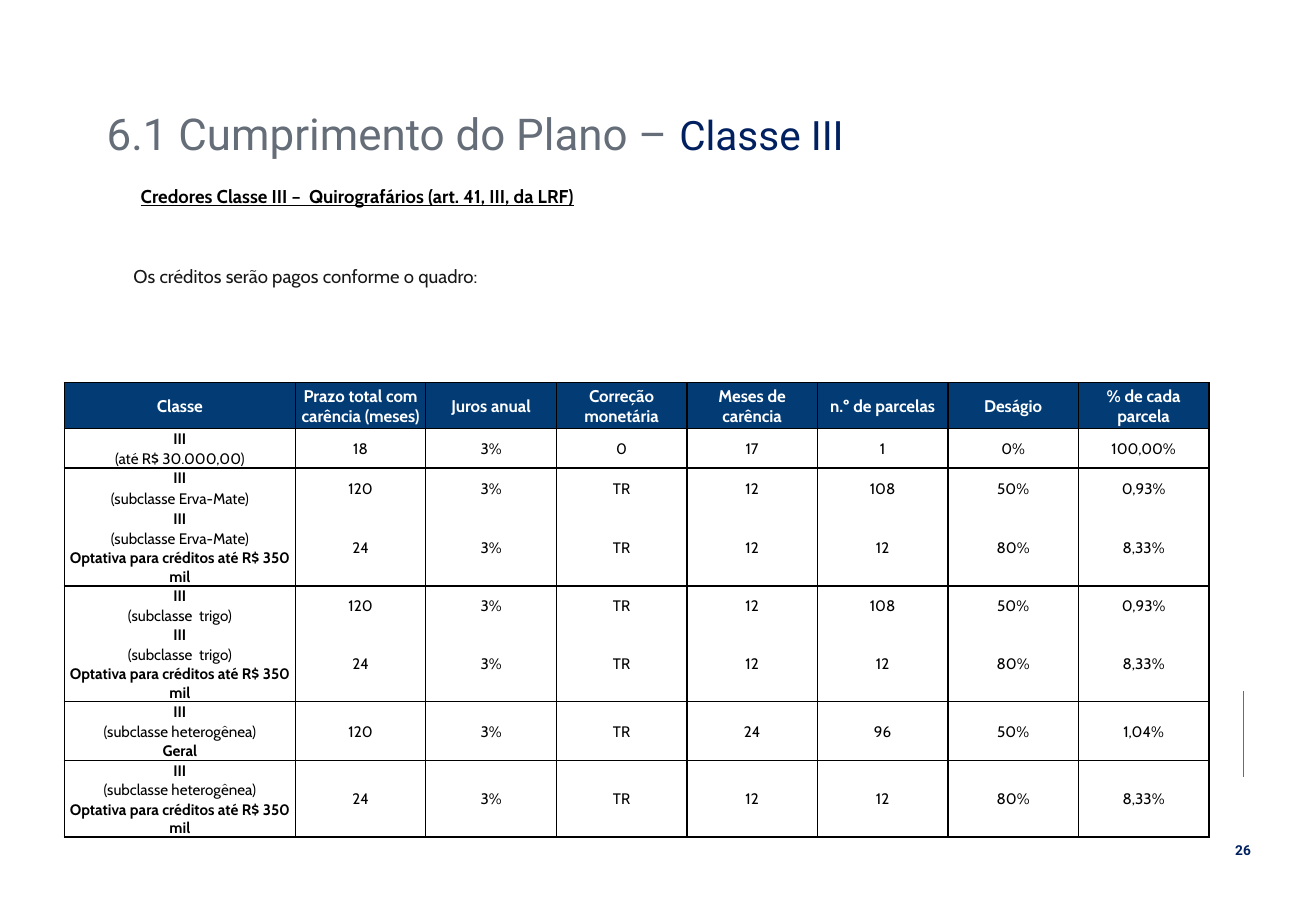
from lxml import etree
from pptx import Presentation
from pptx.dml.color import RGBColor
from pptx.enum.shapes import MSO_CONNECTOR
from pptx.enum.text import MSO_ANCHOR as Anchor, PP_ALIGN as Align
from pptx.oxml.ns import qn
from pptx.util import Inches, Pt

GREY = RGBColor(0x65, 0x6D, 0x78)
NAVY = RGBColor(0x00, 0x20, 0x60)
HEADER_BLUE = RGBColor(0x03, 0x3C, 0x75)
INK = RGBColor(0x18, 0x17, 0x17)
BLACK = RGBColor(0, 0, 0)
WHITE = RGBColor(255, 255, 255)

presentation = Presentation()
presentation.slide_width = Inches(10.83)
presentation.slide_height = Inches(7.5)
slide = presentation.slides.add_slide(presentation.slide_layouts[6])


def add_text(left, top, width, height, runs, font_name, align, spacing=1.0):
    """Add a one-paragraph text box; runs are (text, size, colour, bold)."""
    box = slide.shapes.add_textbox(Inches(left), Inches(top), Inches(width), Inches(height))
    box.text_frame.word_wrap = True
    paragraph = box.text_frame.paragraphs[0]
    paragraph.alignment = align
    paragraph.line_spacing = spacing
    for text, size, color, bold in runs:
        run = paragraph.add_run()
        run.text = text
        run.font.name = font_name
        run.font.size = Pt(size)
        run.font.color.rgb = color
        run.font.bold = bold
    return box


def style_cell(cell, text, size, color, bold, top, bottom):
    """Write a cell, with side borders and optional top and bottom borders."""
    cell.margin_left = cell.margin_right = cell.margin_top = Inches(0.01)
    cell.margin_bottom = 0
    cell.vertical_anchor = Anchor.MIDDLE
    paragraph = cell.text_frame.paragraphs[0]
    paragraph.alignment = Align.CENTER
    if text:
        paragraph.add_run().text = text
    paragraph.font.name = "Cabin"
    paragraph.font.size = Pt(size)
    paragraph.font.bold = bold
    paragraph.font.color.rgb = color
    properties = cell._tc.get_or_add_tcPr()
    for side, shown in (("L", True), ("R", True), ("T", top), ("B", bottom)):
        line = etree.SubElement(properties, qn(f"a:ln{side}"), w=str(Pt(1)))
        if shown:
            fill = etree.SubElement(line, qn("a:solidFill"))
            etree.SubElement(fill, qn("a:srgbClr"), val=str(BLACK))
        else:
            etree.SubElement(line, qn("a:noFill"))


# Side rule and page number
rule = slide.shapes.add_connector(
    MSO_CONNECTOR.STRAIGHT, Inches(10.23), Inches(5.69), Inches(10.23), Inches(6.4))
rule.line.color.rgb = GREY
rule.line.width = Pt(0.5)
etree.SubElement(rule._element.spPr, qn("a:effectLst"))
page_number = add_text(10.06, 6.88, 0.34, 0.24, [("26", 8.1, NAVY, True)], "Roboto", Align.CENTER)
page_number.text_frame.word_wrap = False

# Title and introduction
title = add_text(
    0.78, 0.86, 8.74, 0.53,
    [("6.1 Cumprimento do Plano – ", 26, GREY, False), ("Classe III", 24, NAVY, False)],
    "Roboto", Align.LEFT, 0.9)
title.text_frame.vertical_anchor = Anchor.MIDDLE

heading = add_text(
    0.67, 1.38, 9.42, 0.66,
    [("Credores Classe III –  Quirografários (art. 41, III, da LRF)", 11, BLACK, True)],
    "Cabin", Align.JUSTIFY, 1.5)
heading_paragraph = heading.text_frame.paragraphs[0]
heading_paragraph.runs[0].font.underline = True
heading_indent = heading_paragraph._p.get_or_add_pPr()
heading_indent.set("marL", str(Inches(0.13)))
heading_indent.set("indent", str(Inches(0.26)))
heading_columns = heading.text_frame._txBody.bodyPr
heading_columns.set("numCol", "2")
heading_columns.set("spcCol", str(Inches(0.39)))

add_text(1, 2.04, 8.51, 0.38, [("Os créditos serão pagos conforme o quadro:", 11, INK, False)],
         "Cabin", Align.JUSTIFY, 1.5)

# Payment conditions: label lines, values, border above, border below
HEADERS = ["Classe", "Prazo total com carência (meses)", "Juros anual", "Correção monetária",
           "Meses de carência", "n.º de parcelas", "Deságio", "% de cada parcela"]
OPTIONAL = "Optativa para créditos até R$ 350 mil"
MATE, WHEAT, MIXED = "(subclasse Erva-Mate)", "(subclasse  trigo)", "(subclasse heterogênea)"
STANDARD_TERMS = ["120", "3%", "TR", "12", "108", "50%", "0,93%"]
OPTIONAL_TERMS = ["24", "3%", "TR", "12", "12", "80%", "8,33%"]
GROUPS = [
    (["III", "(até R$ 30.000,00)"], ["18", "3%", "0", "17", "1", "0%", "100,00%"], True, True),
    (["III", MATE], STANDARD_TERMS, True, False),
    (["III", MATE, OPTIONAL], OPTIONAL_TERMS, False, True),
    (["III", WHEAT], STANDARD_TERMS, True, False),
    (["III", WHEAT, OPTIONAL], OPTIONAL_TERMS, False, True),
    (["III", MIXED, "Geral"], ["120", "3%", "TR", "24", "96", "50%", "1,04%"], True, True),
    (["III", MIXED, OPTIONAL], OPTIONAL_TERMS, True, True),
]
row_heights = [0.38]
for labels, *_ in GROUPS:
    row_heights += [0.31 if label == OPTIONAL else 0.16 for label in labels]
row_heights[4] = 0.18

table = slide.shapes.add_table(
    len(row_heights), len(HEADERS), Inches(0.53), Inches(3.15),
    Inches(9.42), Inches(sum(row_heights))).table
table.first_row = table.horz_banding = False
for row, height in zip(table.rows, row_heights):
    row.height = Inches(height)
for index, column in enumerate(table.columns):
    column.width = Inches((9.42 - 1.9) / 7 if index else 1.9)

# Header row
for column, text in enumerate(HEADERS):
    cell = table.cell(0, column)
    style_cell(cell, text, 10, WHITE, True, True, True)
    cell.fill.solid()
    cell.fill.fore_color.rgb = HEADER_BLUE

# Body rows: one label line per row, values merged down the group
first_row = 1
for labels, values, top, bottom in GROUPS:
    last = len(labels) - 1
    for line, label in enumerate(labels):
        for column, value in enumerate([label] + values):
            cell = table.cell(first_row + line, column)
            is_label = column == 0
            text = value if is_label or line == 0 else ""
            bold = is_label and not label.startswith("(")
            ends_group = line == last or (line == 0 and not is_label)
            style_cell(cell, text, 9, BLACK, bold, top and line == 0, bottom and ends_group)
            cell.fill.background()
    for column in range(1, len(HEADERS)):
        table.cell(first_row, column).merge(table.cell(first_row + last, column))
    first_row += len(labels)

presentation.save("out.pptx")
